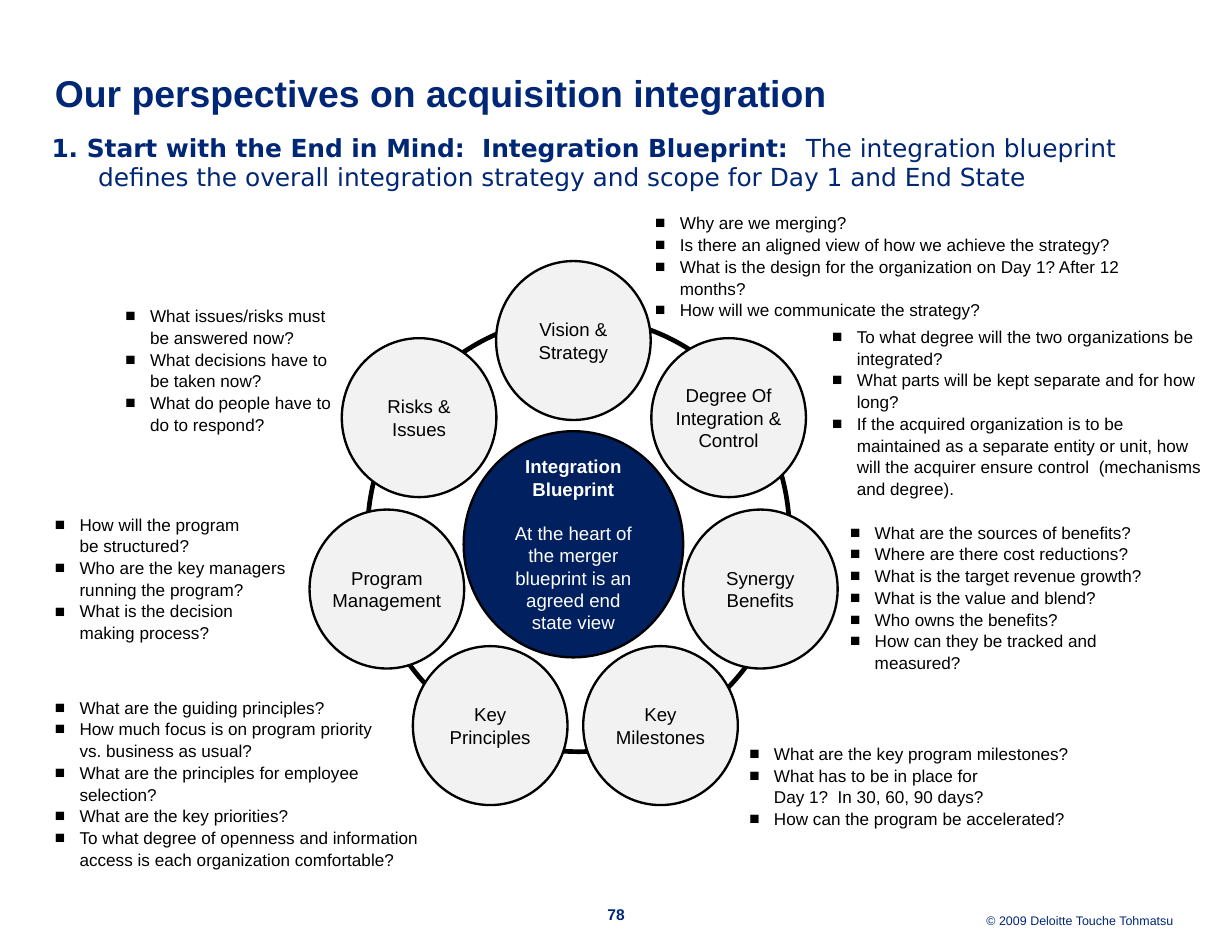
from lxml.etree import SubElement
from pptx import Presentation
from pptx.dml.color import RGBColor
from pptx.enum.shapes import MSO_SHAPE
from pptx.enum.text import MSO_ANCHOR, MSO_AUTO_SIZE, PP_ALIGN
from pptx.oxml.ns import qn
from pptx.util import Pt

NAVY = RGBColor(0x00, 0x27, 0x76)
DEEP_NAVY = RGBColor(0x00, 0x20, 0x60)
PALE_GREY = RGBColor(0xF2, 0xF2, 0xF2)
BLACK = RGBColor(0x00, 0x00, 0x00)
WHITE = RGBColor(0xFF, 0xFF, 0xFF)

CENTRE_X = 368.6
TOPIC_WIDTH, TOPIC_HEIGHT = 99.4, 102.2
HANGING = 15.84

TOPICS = [
    ("Degree Of Integration & Control", 99.8, 217.4),
    ("Key Principles", -53.5, 415.4),
    ("Vision & Strategy", 0, 167.8),
    ("Risks & Issues", -99.2, 217.4),
    ("Program Management", -119.9, 327.6),
    ("Synergy Benefits", 120.2, 327.6),
    ("Key Milestones", 56, 415.4),
]

QUESTIONS = [
    ((421.2, 136.1, 329.8, 69.8), [
        "Why are we merging?",
        "Is there an aligned view of how we achieve the strategy?",
        "What is the design for the organization on Day 1? After 12 months?",
        "How will we communicate the strategy?"]),
    ((546.5, 334.8, 210.2, 97.9), [
        "What are the sources of benefits?",
        "Where are there cost reductions?",
        "What is the target revenue growth?",
        "What is the value and blend?",
        "Who owns the benefits?",
        "How can they be tracked and measured?"]),
    ((35.3, 329.8, 183.6, 83.5), [
        "How will the program\nbe structured?",
        "Who are the key managers\nrunning the program?",
        "What is the decision\nmaking process?"]),
    ((481.7, 477.4, 216.7, 55.4), [
        "What are the key program milestones?",
        "What has to be in place for\nDay 1?  In 30, 60, 90 days?",
        "How can the program be accelerated?"]),
    ((80.6, 195.8, 138.2, 83.5), [
        "What issues/risks must be answered now?",
        "What decisions have to be taken now?",
        "What do people have to do to respond?"]),
    ((535, 208.8, 241.9, 112.3), [
        "To what degree will the two organizations be integrated?",
        "What parts will be kept separate and for how long?",
        "If the acquired organization is to be maintained as a separate entity or unit, "
        "how will the acquirer ensure control  (mechanisms and degree)."]),
    ((35.3, 447.1, 250.6, 112.3), [
        "What are the guiding principles?",
        "How much focus is on program priority \nvs. business as usual?",
        "What are the principles for employee \nselection?",
        "What are the key priorities?",
        "To what degree of openness and information access is each "
        "organization comfortable?"]),
]


class BlueprintSlide:
    """Draws the integration blueprint elements in one shared style."""

    def __init__(self, slide, font="Arial"):
        self.slide = slide
        self.font = font

    def add_words(self, paragraph, words, size, colour, bold=False, font=None):
        for index, line in enumerate(words.split("\n")):
            if index:
                paragraph.add_line_break()
            run = paragraph.add_run()
            run.text = line
            run.font.name = font or self.font
            run.font.size = Pt(size)
            run.font.bold = bold
            run.font.color.rgb = colour

    def prepare(self, frame, anchor=MSO_ANCHOR.TOP, side=0, edge=0):
        frame.word_wrap = True
        frame.auto_size = MSO_AUTO_SIZE.NONE
        frame.vertical_anchor = anchor
        frame.margin_left = frame.margin_right = Pt(side)
        frame.margin_top = frame.margin_bottom = Pt(edge)
        return frame

    def text_box(self, box, anchor=MSO_ANCHOR.TOP):
        shape = self.slide.shapes.add_textbox(*map(Pt, box))
        return self.prepare(shape.text_frame, anchor)

    def title(self, words, box):
        heading = self.slide.shapes.title
        heading.left, heading.top, heading.width, heading.height = map(Pt, box)
        paragraph = self.prepare(heading.text_frame, MSO_ANCHOR.MIDDLE).paragraphs[0]
        paragraph.alignment = PP_ALIGN.LEFT
        paragraph.line_spacing = 1.05
        self.add_words(paragraph, words, 24, NAVY, True)

    def hang(self, paragraph, indent):
        properties = paragraph._p.get_or_add_pPr()
        properties.set("marL", str(Pt(indent)))
        properties.set("indent", str(-Pt(indent)))
        return properties

    def subtitle(self, lead, message, box):
        paragraph = self.text_box(box).paragraphs[0]
        self.hang(paragraph, 30)
        self.add_words(paragraph, lead, 16, NAVY, True, "DejaVu Sans")
        self.add_words(paragraph, message, 16, NAVY, False, "DejaVu Sans")

    def footer(self, words, box, size, alignment, bold=False):
        paragraph = self.text_box(box).paragraphs[0]
        paragraph.alignment = alignment
        paragraph.line_spacing = Pt(12)
        self.add_words(paragraph, words, size, NAVY, bold)

    def circle(self, box, fill=None, weight=1.5):
        shape = self.slide.shapes.add_shape(MSO_SHAPE.OVAL, *map(Pt, box))
        shape.shadow.inherit = False
        if fill is None:
            shape.fill.background()
        else:
            shape.fill.solid()
            shape.fill.fore_color.rgb = fill
        shape.line.color.rgb = BLACK
        shape.line.width = Pt(weight)
        return shape.text_frame

    def topic(self, words, offset, top):
        left = CENTRE_X + offset - TOPIC_WIDTH / 2
        frame = self.circle((left, top, TOPIC_WIDTH, TOPIC_HEIGHT), PALE_GREY)
        paragraph = self.prepare(frame, MSO_ANCHOR.MIDDLE, edge=1.44).paragraphs[0]
        paragraph.alignment = PP_ALIGN.CENTER
        self.add_words(paragraph, words, 12, BLACK)

    def core(self, heading, message, box):
        frame = self.prepare(self.circle(box, DEEP_NAVY), MSO_ANCHOR.MIDDLE, 7.2, 3.6)
        name, explanation = frame.paragraphs[0], frame.add_paragraph()
        name.alignment = explanation.alignment = PP_ALIGN.CENTER
        explanation.space_before = Pt(14)
        self.add_words(name, heading, 12, WHITE, True)
        self.add_words(explanation, message, 12, WHITE)

    def questions(self, box, items):
        frame = self.text_box(box, MSO_ANCHOR.MIDDLE)
        for index, item in enumerate(items):
            paragraph = frame.add_paragraph() if index else frame.paragraphs[0]
            properties = self.hang(paragraph, HANGING)
            colour = SubElement(properties, qn("a:buClr"))
            SubElement(colour, qn("a:srgbClr"), val=str(BLACK))
            SubElement(properties, qn("a:buFont"), typeface=self.font)
            SubElement(properties, qn("a:buChar"), char="■")
            paragraph.line_spacing = 1.06
            self.add_words(paragraph, item, 11, BLACK)


def main():
    deck = Presentation()
    deck.slide_width, deck.slide_height = Pt(792), Pt(612)
    page = BlueprintSlide(deck.slides.add_slide(deck.slide_layouts[5]))
    page.title("Our perspectives on acquisition integration", (35.3, 31, 729.4, 56.2))
    page.subtitle(
        "1. Start with the End in Mind:  Integration Blueprint:  ",
        "The integration blueprint defines the overall integration strategy "
        "and scope for Day 1 and End State",
        (33.1, 85, 725.8, 50.4))
    page.circle((236.2, 203.8, 271.4, 279.4), weight=3)
    for topic in TOPICS:
        page.topic(*topic)
    page.core("Integration Blueprint",
              "At the heart of the merger blueprint is an agreed end state view",
              (298.1, 277.2, 141.1, 145.4))
    for box, items in QUESTIONS:
        page.questions(box, items)
    page.footer("78", (383.8, 581.8, 24.5, 13), 10, PP_ALIGN.CENTER, True)
    page.footer("© 2009 Deloitte Touche Tohmatsu", (554.4, 584.6, 200.2, 13), 8,
                PP_ALIGN.RIGHT)
    deck.save("out.pptx")


if __name__ == "__main__":
    main()
